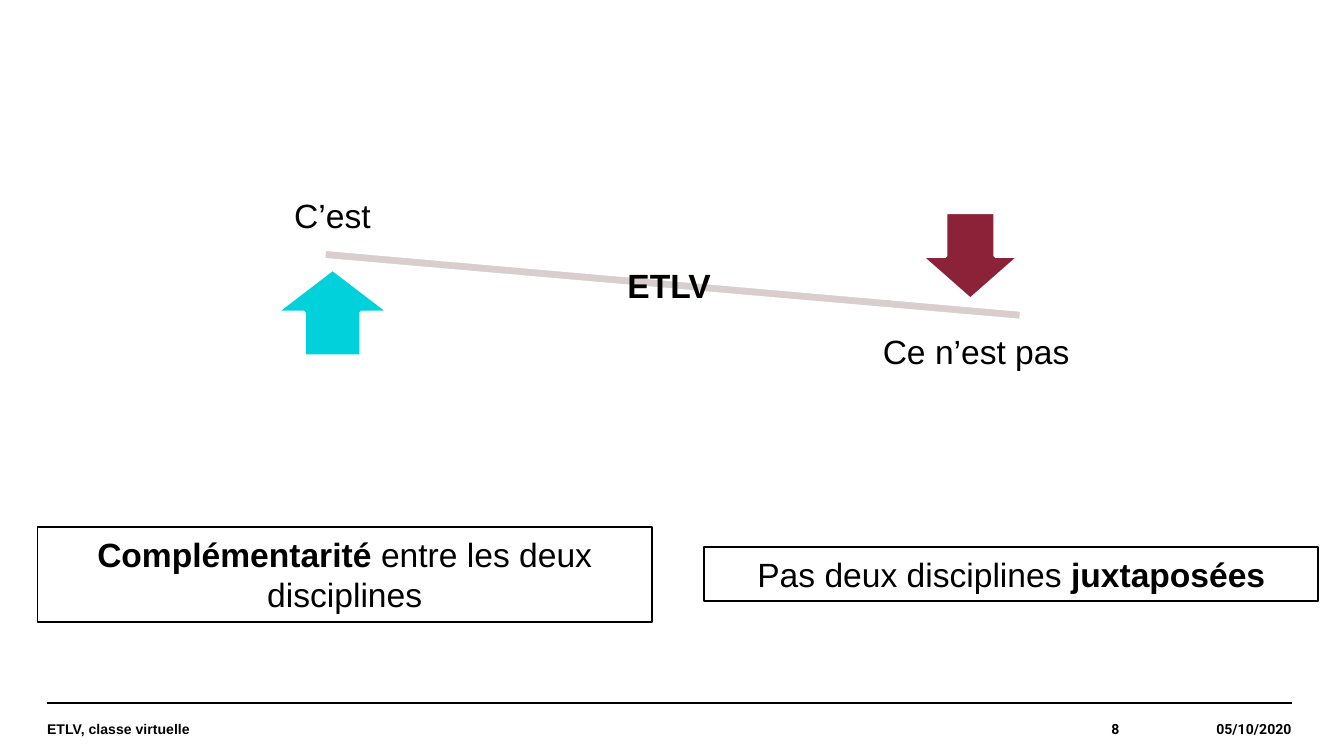
from dataclasses import dataclass

from lxml import etree
from pptx import Presentation
from pptx.dml.color import RGBColor
from pptx.enum import shapes, text
from pptx.oxml.ns import qn
from pptx.util import Inches, Pt


@dataclass(frozen=True)
class Theme:
    black: str = "000000"
    white: str = "FFFFFF"
    beam: str = "DACDCE"
    down: str = "8C2237"
    up: str = "00D1DA"
    font: str = "Arial"
    number_font: str = "Roboto"
    body: float = 18
    footer: float = 7.5


@dataclass(frozen=True)
class Box:
    x: float
    y: float
    w: float
    h: float

    def lengths(self):
        return [Inches(v) for v in (self.x, self.y, self.w, self.h)]


@dataclass(frozen=True)
class Label:
    box: Box
    runs: list  # (text, bold) pairs


@dataclass(frozen=True)
class Figure:
    kind: shapes.MSO_SHAPE
    box: Box
    fill: str
    rotation: float = 0


@dataclass(frozen=True)
class FooterItem:
    box: Box
    text: str
    font: str
    align: text.PP_ALIGN


T = Theme()
LEFT, CENTER, RIGHT = text.PP_ALIGN.LEFT, text.PP_ALIGN.CENTER, text.PP_ALIGN.RIGHT


def write(sp, runs, *, size=T.body, font=T.font, align=LEFT, wrap=True, inset=None):
    """Fill a shape with one paragraph of (text, bold) runs."""
    tf = sp.text_frame
    tf.word_wrap = wrap
    tf.vertical_anchor = text.MSO_ANCHOR.TOP
    if inset is not None:
        tf.margin_left = tf.margin_right = tf.margin_top = tf.margin_bottom = Inches(inset)
        tf.vertical_anchor = text.MSO_ANCHOR.MIDDLE
    p = tf.paragraphs[0]
    p.alignment = align
    for words, bold in runs:
        r = p.add_run()
        r.text = words
        r.font.name, r.font.size, r.font.bold = font, Pt(size), bold
        r.font.color.rgb = RGBColor.from_string(T.black)


def add_shape(slide, kind, box: Box, line: str, width: float, fill: str = ""):
    sp = slide.shapes.add_shape(kind, *box.lengths())
    sp.shadow.inherit = False
    if fill:
        sp.fill.solid()
        sp.fill.fore_color.rgb = RGBColor.from_string(fill)
    else:
        sp.fill.background()
    sp.line.color.rgb = RGBColor.from_string(line)
    sp.line.width = Pt(width)
    return sp


def add_figure(slide, fig: Figure) -> None:
    sp = add_shape(slide, fig.kind, fig.box, T.white, 2, fig.fill)
    sp.rotation = fig.rotation


def add_statement(slide, label: Label) -> None:
    sp = add_shape(slide, shapes.MSO_SHAPE.RECTANGLE, label.box, T.black, 1)
    write(sp, label.runs, align=CENTER)


def add_label(slide, label: Label) -> None:
    write(slide.shapes.add_textbox(*label.box.lengths()), label.runs, wrap=False)


def add_footer_item(slide, item: FooterItem) -> None:
    sp = slide.shapes.add_textbox(*item.box.lengths())
    write(sp, [(item.text, True)], size=T.footer, font=item.font, align=item.align, inset=0)


def add_rule(slide, x1: float, x2: float, y: float) -> None:
    line = slide.shapes.add_connector(
        shapes.MSO_CONNECTOR.STRAIGHT, Inches(x1), Inches(y), Inches(x2), Inches(y))
    line.line.color.rgb = RGBColor.from_string(T.black)
    line.line.width = Pt(0.8)
    etree.SubElement(line._element.spPr, qn("a:effectLst"))


FOOTER_Y, FOOTER_H = 5.23, 0.39
FOOTER = [
    FooterItem(Box(8.33, FOOTER_Y, 1.28, FOOTER_H), "05/10/2020", T.number_font, RIGHT),
    FooterItem(Box(0.35, FOOTER_Y, 6.38, FOOTER_H), "ETLV, classe virtuelle", T.font, LEFT),
    FooterItem(Box(6.85, FOOTER_Y, 1.48, FOOTER_H), "8", T.number_font, RIGHT),
]
STATEMENTS = [
    Label(Box(0.28, 3.92, 4.57, 0.71),
          [("Complémentarité", True), (" entre les deux disciplines", False)]),
    Label(Box(5.24, 4.07, 4.57, 0.4),
          [("Pas deux disciplines ", False), ("juxtaposées", True)]),
]
BALANCE = [
    Figure(shapes.MSO_SHAPE.MATH_MINUS, Box(1.46, 1.95, 7.09, 0.34), T.beam, 5),
    Figure(shapes.MSO_SHAPE.DOWN_ARROW, Box(6.85, 1.58, 0.74, 0.65), T.down),
    Figure(shapes.MSO_SHAPE.UP_ARROW, Box(2.05, 2, 0.85, 0.65), T.up),
]
LABELS = [
    Label(Box(2.09, 1.4, 0.78, 0.4), [("C’est", False)]),
    Label(Box(6.47, 2.41, 1.6, 0.4), [("Ce n’est pas", False)]),
    Label(Box(4.57, 1.92, 0.83, 0.4), [("ETLV", True)]),
]


def main() -> None:
    prs = Presentation()
    # 16:9 page
    prs.slide_width, prs.slide_height = Inches(10), Inches(10 * 9 / 16)
    slide = prs.slides.add_slide(prs.slide_layouts[6])

    # Footer
    add_rule(slide, 0.35, 9.61, FOOTER_Y)
    for item in FOOTER:
        add_footer_item(slide, item)

    # Framed statements
    for statement in STATEMENTS:
        add_statement(slide, statement)

    # Tilted balance and its labels
    for fig in BALANCE:
        add_figure(slide, fig)
    for label in LABELS:
        add_label(slide, label)

    prs.save("out.pptx")


if __name__ == "__main__":
    main()
